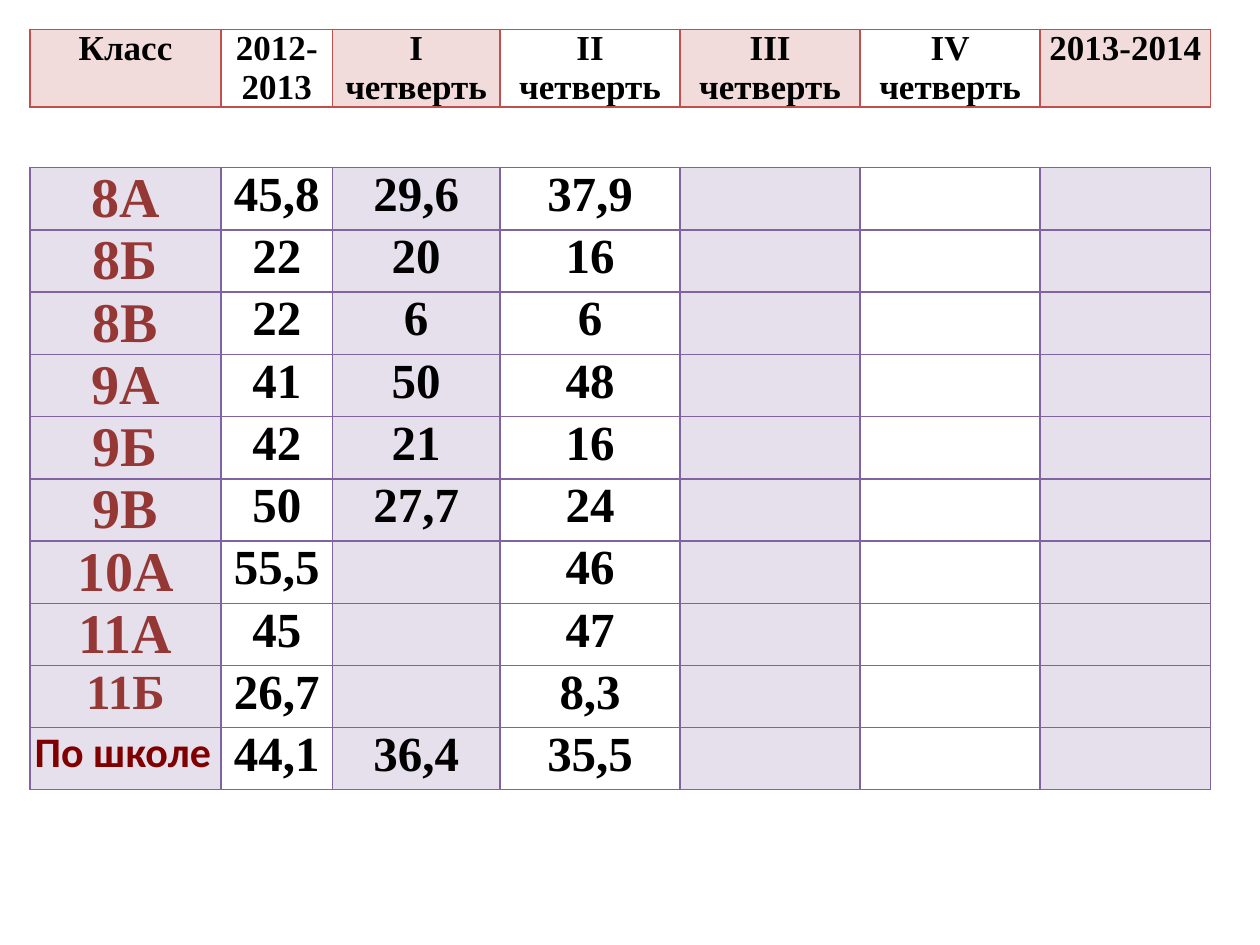
from lxml import etree
from pptx import Presentation
from pptx.dml.color import RGBColor
from pptx.enum.text import PP_ALIGN
from pptx.oxml.ns import qn
from pptx.util import Cm, Pt

LEFT, CENTER = PP_ALIGN.LEFT, PP_ALIGN.CENTER
COLORS = {"red": "C0504D", "purple": "8064A2", "class": "953735",
          "maroon": "800000", "text": "000000"}
SERIF, SANS = "Times New Roman", "Calibri"
COLUMN_WIDTHS = [3.86, 2.24, 3.38, 3.63, 3.63, 3.63, 3.43]

prs = Presentation()
prs.slide_width, prs.slide_height = Cm(25.4), Cm(19.05)
slide = prs.slides.add_slide(prs.slide_layouts[6])


def add_grid(top, row_count, row_height, color):
    """Add a bordered table whose odd columns have a pale tint."""
    grid = slide.shapes.add_table(
        row_count, len(COLUMN_WIDTHS), Cm(0.6), Cm(top),
        Cm(sum(COLUMN_WIDTHS)), Cm(row_height * row_count)).table
    grid.first_row = grid.horz_banding = False
    for column, width in zip(grid.columns, COLUMN_WIDTHS):
        column.width = Cm(width)
    for row in grid.rows:
        row.height = Cm(row_height)
        for col, cell in enumerate(row.cells):
            if col % 2 == 0:
                cell.fill.solid()
                cell.fill.fore_color.rgb = RGBColor.from_string(color)
                tint = next(cell._tc.tcPr.iter(qn("a:srgbClr")))
                etree.SubElement(tint, qn("a:alpha"), val="20000")
            else:
                cell.fill.background()
            for index, side in enumerate(("a:lnL", "a:lnR", "a:lnT", "a:lnB")):
                border = etree.Element(qn(side), w=str(Pt(1)))
                line_fill = etree.SubElement(border, qn("a:solidFill"))
                etree.SubElement(line_fill, qn("a:srgbClr"), val=color)
                cell._tc.tcPr.insert(index, border)
    return grid


def write_cell(cell, lines, size, color, font=SERIF, align=CENTER, inset=0.1):
    """Write bold lines into a cell and return their runs."""
    cell.margin_left = cell.margin_right = Cm(inset)
    cell.margin_top = cell.margin_bottom = 0
    frame = cell.text_frame
    runs = []
    for index, line in enumerate(lines):
        paragraph = frame.add_paragraph() if index else frame.paragraphs[0]
        paragraph.alignment = align
        run = paragraph.add_run()
        run.text = line
        run.font.name, run.font.size, run.font.bold = font, Pt(size), True
        run.font.color.rgb = RGBColor.from_string(COLORS[color])
        runs.append(run)
    return runs


# Results by class
results = [
    ("8А", "45,8", "29,6", "37,9"),
    ("8Б", "22", "20", "16"),
    ("8В", "22", "6", "6"),
    ("9А", "41", "50", "48"),
    ("9Б", "42", "21", "16"),
    ("9В", "50", "27,7", "24"),
    ("10А", "55,5", "", "46"),
    ("11А", "45", "", "47"),
    ("11Б", "26,7", "", "8,3"),
    ("По школе", "44,1", "36,4", "35,5"),
]
results_grid = add_grid(3.38, len(results), 1.25, COLORS["purple"])
for row, (class_name, *percents) in enumerate(results):
    class_cell = results_grid.cell(row, 0)
    if class_name == "По школе":
        write_cell(class_cell, [class_name], 24, "maroon", SANS, LEFT)
    else:
        class_size = 28 if class_name == "11Б" else 32
        write_cell(class_cell, [class_name], class_size, "class")
    for col, percent in enumerate(percents, start=1):
        if percent:
            write_cell(results_grid.cell(row, col), [percent], 28, "text", inset=0.18)

# Column headings with a thin outline on the letters
headings = [["Класс"], ["2012-2013"], ["I", "четверть"], ["II", "четверть"],
            ["III", "четверть"], ["IV", "четверть"], ["2013-2014"]]
heading_grid = add_grid(0.59, 1, 1.57, COLORS["red"])
for col, lines in enumerate(headings):
    for run in write_cell(heading_grid.cell(0, col), lines, 20, "text"):
        outline = etree.Element(qn("a:ln"), w=str(Pt(0.75)))
        outline_fill = etree.SubElement(outline, qn("a:solidFill"))
        etree.SubElement(outline_fill, qn("a:srgbClr"), val=COLORS["maroon"])
        run.font._element.insert(0, outline)

prs.save("out.pptx")
